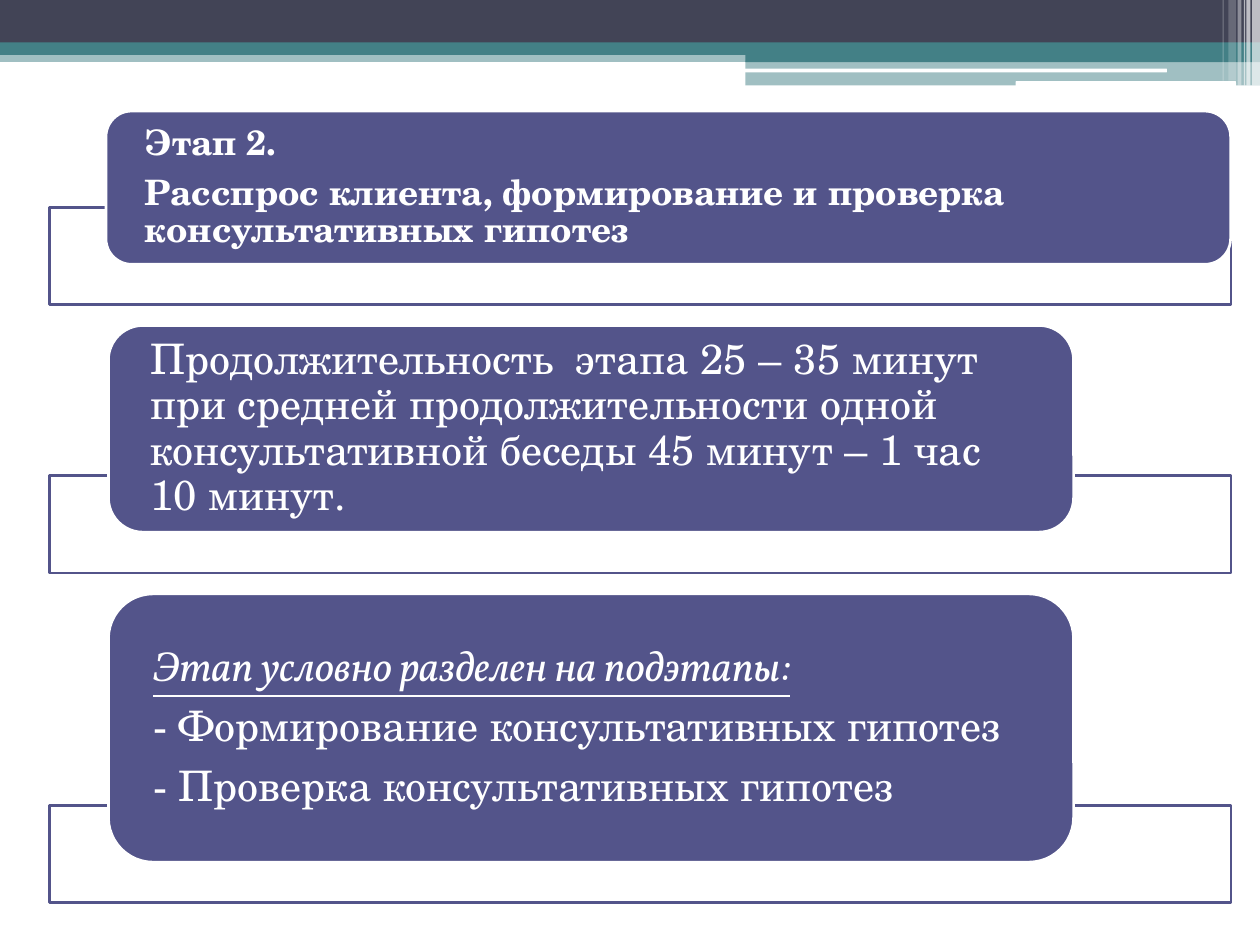
from lxml.etree import SubElement
from pptx import Presentation
from pptx.dml.color import RGBColor
from pptx.enum.shapes import MSO_SHAPE as Shape
from pptx.enum.text import MSO_ANCHOR as Anchor, PP_ALIGN as Align
from pptx.oxml.ns import qn
from pptx.util import Pt

SERIF = "TeX Gyre Schola"
ITALIC_SERIF = "Vollkorn"
WHITE, TEAL, SLATE, INDIGO = "FFFFFF", "438086", "424456", "53548A"
CORNER_INSET = 0.0488


def color(hex_code):
    return RGBColor.from_string(hex_code)


class StageSlide:
    def __init__(self, deck):
        self.shapes = deck.slides.add_slide(deck.slide_layouts[6]).shapes

    def block(self, box, fill, outline=None, opacity=100, kind=Shape.RECTANGLE):
        block = self.shapes.add_shape(kind, *map(Pt, box))
        block.shadow.inherit = False
        block.fill.solid()
        block.fill.fore_color.rgb = color(fill)
        if opacity < 100:
            tint = block.fill._xPr.find(qn("a:solidFill"))[0]
            SubElement(tint, qn("a:alpha"), val=str(opacity * 1000))
        if outline:
            block.line.color.rgb = color(outline)
            block.line.width = Pt(1.5)
        else:
            block.line.fill.background()

    def text(self, box, paragraphs, size, bold):
        frame = self.shapes.add_textbox(*map(Pt, box)).text_frame
        frame.word_wrap = True
        frame.vertical_anchor = Anchor.MIDDLE
        frame.margin_left = frame.margin_right = Pt(18)
        frame.margin_top = frame.margin_bottom = Pt(0)
        for index, (words, is_heading) in enumerate(paragraphs):
            paragraph = frame.paragraphs[0] if index == 0 else frame.add_paragraph()
            paragraph.alignment = Align.LEFT
            paragraph.line_spacing = 0.9
            paragraph.space_after = Pt(0.35 * size if len(paragraphs) > 1 else 0)
            run = paragraph.add_run()
            run.text = words
            font = run.font
            font.name = ITALIC_SERIF if is_heading else SERIF
            font.size = Pt(size)
            font.bold = bold
            font.italic = font.underline = is_heading
            font.color.rgb = color(WHITE)

    def stage(self, frame_top, card, paragraphs, size=24, bold=False):
        left, top, width, height = card
        inset = height * CORNER_INSET
        self.block((28.2, frame_top, 675.3, 55.5), WHITE, INDIGO, 90)
        self.block(card, INDIGO, WHITE, kind=Shape.ROUNDED_RECTANGLE)
        inner = (left + inset, top + inset, width - 2 * inset, height - 2 * inset)
        self.text(inner, paragraphs, size, bold)


def main():
    deck = Presentation()
    deck.slide_width, deck.slide_height = Pt(720), Pt(540)
    slide = StageSlide(deck)

    header_bands = [
        ((0, 28.8, 720, 6.6), TEAL, 50),
        ((0, 0, 720, 24.5), SLATE, 100),
        ((0, 24.2, 720, 7.2), TEAL, 100),
        ((426, 28.3, 294, 7.2), TEAL, 100),
        ((426, 34.6, 294, 14.2), TEAL, 50),
    ]
    for box, fill, opacity in header_bands:
        slide.block(box, fill, opacity=opacity)

    for box in [(425.6, 39.2, 241.2, 2.2), (580.3, 46.4, 126, 2.9)]:
        slide.block(box, WHITE, kind=Shape.ROUNDED_RECTANGLE)

    corner_stripes = [
        (715.5, 4.5, 49, 65),
        (712.3, 2.2, 49, 65),
        (710.8, 0.7, 49, 60),
        (707.2, 2.2, 49, 40),
        (702, 4.3, 46.1, 20),
        (698.6, 0.7, 46.1, 30),
    ]
    for left, width, height, opacity in corner_stripes:
        slide.block((left, 0, width, height), WHITE, opacity=opacity)

    slide.stage(118.5, (60.6, 63.5, 642.6, 87.5), [
        ("Этап 2.", False),
        ("Расспрос клиента, формирование и проверка консультативных гипотез", False),
    ], size=20, bold=True)
    slide.stage(271.9, (62, 186, 551.5, 118.1), [
        ("Продолжительность  этапа 25 – 35 минут при средней продолжительности "
         "одной консультативной беседы 45 минут – 1 час 10 минут.", False),
    ])
    slide.stage(460.4, (62, 339.4, 551.5, 153.3), [
        ("Этап условно разделен на подэтапы:", True),
        ("- Формирование консультативных гипотез", False),
        ("- Проверка консультативных гипотез", False),
    ])

    deck.save("out.pptx")


if __name__ == "__main__":
    main()
